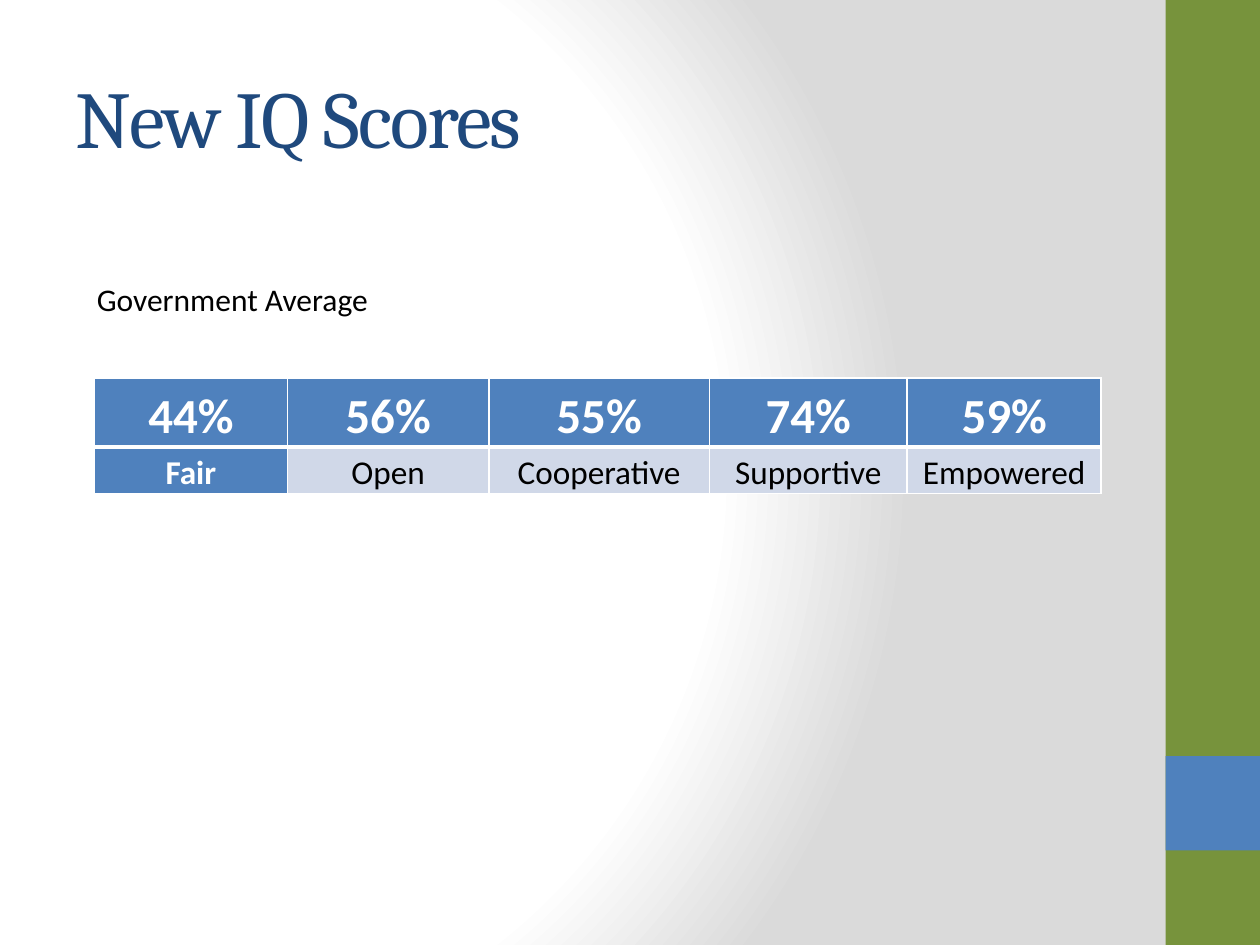
from pptx import Presentation
from pptx.dml.color import RGBColor
from pptx.enum import shapes, text
from pptx.oxml import parse_xml
from pptx.oxml.ns import nsdecls
from pptx.util import Emu, Pt

PX = 9144  # EMU per px, 100 px to the inch
WHITE, BLACK, BLUE, NAVY = "FFFFFF", "000000", "4F81BD", "1F497D"
GREEN, PALE_BLUE, GREY = "77933C", "D0D8E8", "DADADA"

SCORES = [("44%", "Fair"), ("56%", "Open"), ("55%", "Cooperative"),
          ("74%", "Supportive"), ("59%", "Empowered")]
COLUMN_WIDTHS = [153, 160, 175, 157, 154]
ROW_HEIGHTS = [54, 36]


def px(length):
    return Emu(length * PX)


def box(*lengths):
    return [px(length) for length in lengths]


def rgb(color):
    return RGBColor.from_string(color)


def add_run(paragraph, words, size, color, font="Calibri", bold=False):
    run = paragraph.add_run()
    run.text = words
    run.font.size = Pt(size)
    run.font.name = font
    run.font.bold = bold
    run.font.color.rgb = rgb(color)
    return run


def set_background(slide):
    """White glow from the left that fades to grey."""
    slide.background.fill.solid()
    solid = slide.element.xpath(".//p:bgPr/a:solidFill")[0]
    stops = "".join(
        f'<a:gs pos="{percent * 1000}"><a:srgbClr val="{color}"/></a:gs>'
        for percent, color in [(0, WHITE), (75, WHITE), (100, GREY)])
    glow = parse_xml(
        f'<a:gradFill {nsdecls("a")} rotWithShape="1"><a:gsLst>{stops}</a:gsLst>'
        '<a:path path="circle">'
        '<a:fillToRect l="20000" t="50000" r="100000" b="50000"/>'
        '</a:path></a:gradFill>')
    solid.getparent().replace(solid, glow)


def add_block(slide, bounds, color):
    block = slide.shapes.add_shape(shapes.MSO_SHAPE.RECTANGLE, *box(*bounds))
    block.shadow.inherit = False
    block.fill.solid()
    block.fill.fore_color.rgb = rgb(color)
    block.line.fill.background()


def set_title(slide, words):
    title = slide.shapes.title
    title.left, title.top, title.width, title.height = box(50, 30, 833, 125)
    frame = title.text_frame
    frame.vertical_anchor = text.MSO_ANCHOR.MIDDLE
    heading = frame.paragraphs[0]
    heading.alignment = text.PP_ALIGN.LEFT
    run = add_run(heading, words, 46, NAVY, "Cambria")
    run.font._element.set("spc", "-100")


def add_caption(slide, words):
    frame = slide.shapes.add_textbox(*box(67, 217, 383, 40)).text_frame
    frame.word_wrap = True
    frame.auto_size = text.MSO_AUTO_SIZE.SHAPE_TO_FIT_TEXT
    add_run(frame.paragraphs[0], words, 18, BLACK)


def set_borders(cell, bottom):
    """White cell borders, 1 pt except for the given bottom width."""
    properties = cell._tc.get_or_add_tcPr()
    widths = {"L": 1, "R": 1, "T": 1, "B": bottom}
    for position, (side, width) in enumerate(widths.items()):
        properties.insert(position, parse_xml(
            f'<a:ln{side} {nsdecls("a")} w="{Pt(width)}"><a:solidFill>'
            f'<a:srgbClr val="{WHITE}"/></a:solidFill></a:ln{side}>'))


def fill_cell(cell, words, size, color, fill, bold, anchor, bottom):
    cell.fill.solid()
    cell.fill.fore_color.rgb = rgb(fill)
    cell.vertical_anchor = anchor
    cell.margin_left = cell.margin_right = px(7)
    cell.margin_top = cell.margin_bottom = 0
    paragraph = cell.text_frame.paragraphs[0]
    paragraph.alignment = text.PP_ALIGN.CENTER
    paragraph.line_spacing = 1.15
    add_run(paragraph, words, size, color, bold=bold)
    set_borders(cell, bottom)


def add_score_table(slide):
    table = slide.shapes.add_table(
        len(ROW_HEIGHTS), len(SCORES),
        *box(75, 300, sum(COLUMN_WIDTHS), sum(ROW_HEIGHTS))).table
    for column, width in zip(table.columns, COLUMN_WIDTHS):
        column.width = px(width)
    for row, height in zip(table.rows, ROW_HEIGHTS):
        row.height = px(height)
    for index, (score, quality) in enumerate(SCORES):
        fill_cell(table.cell(0, index), score, 28, WHITE, BLUE, True,
                  text.MSO_ANCHOR.MIDDLE, 3)
        first = index == 0
        fill_cell(table.cell(1, index), quality, 19,
                  WHITE if first else BLACK, BLUE if first else PALE_BLUE,
                  first, text.MSO_ANCHOR.BOTTOM, 1)


def main():
    deck = Presentation()
    deck.slide_width, deck.slide_height = box(1000, 750)
    slide = deck.slides.add_slide(deck.slide_layouts.get_by_name("Title Only"))
    set_background(slide)
    add_block(slide, (925, 0, 75, 750), GREEN)
    add_block(slide, (925, 600, 75, 75), BLUE)
    set_title(slide, "New IQ Scores")
    add_score_table(slide)
    add_caption(slide, "Government Average")
    deck.save("out.pptx")


if __name__ == "__main__":
    main()
